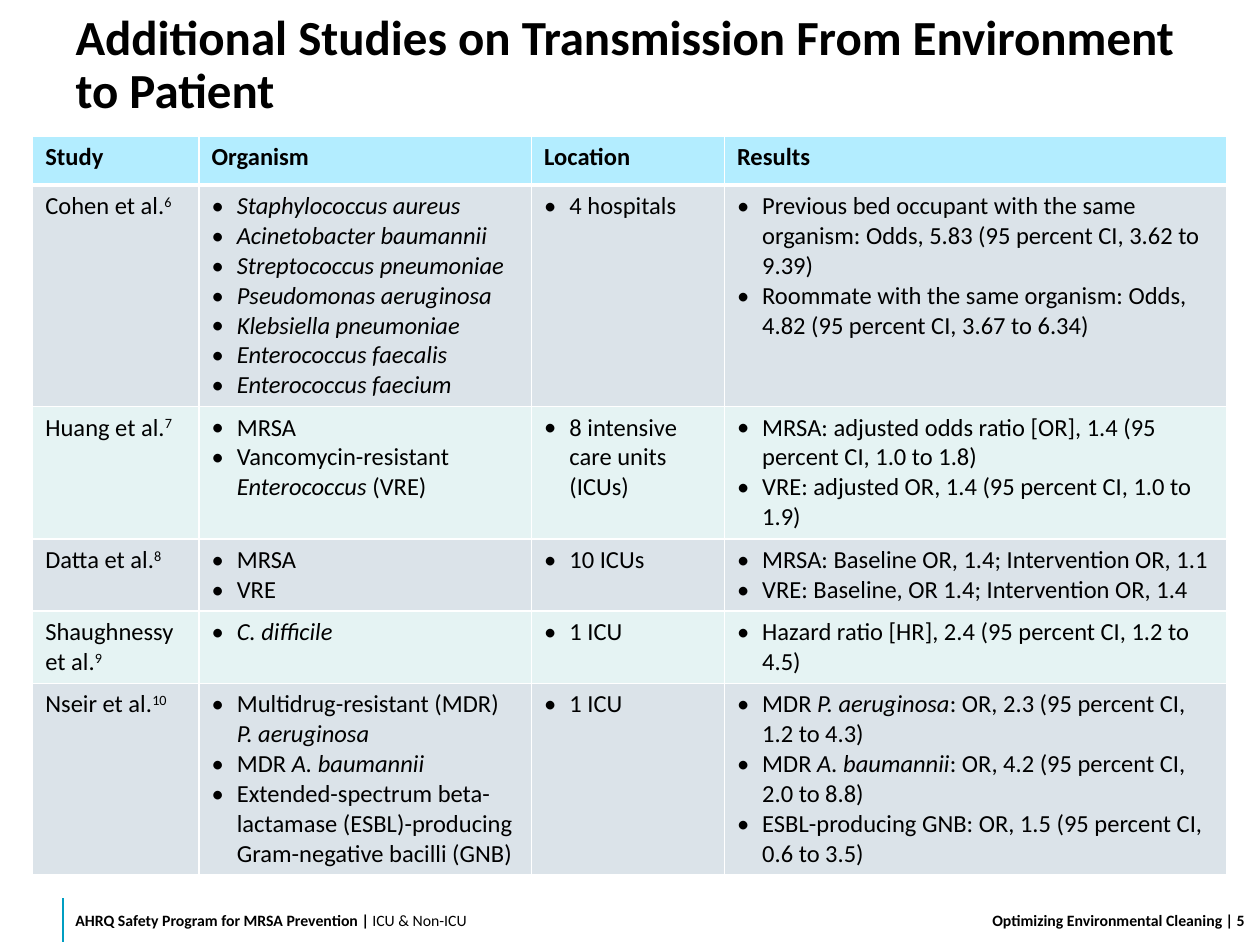
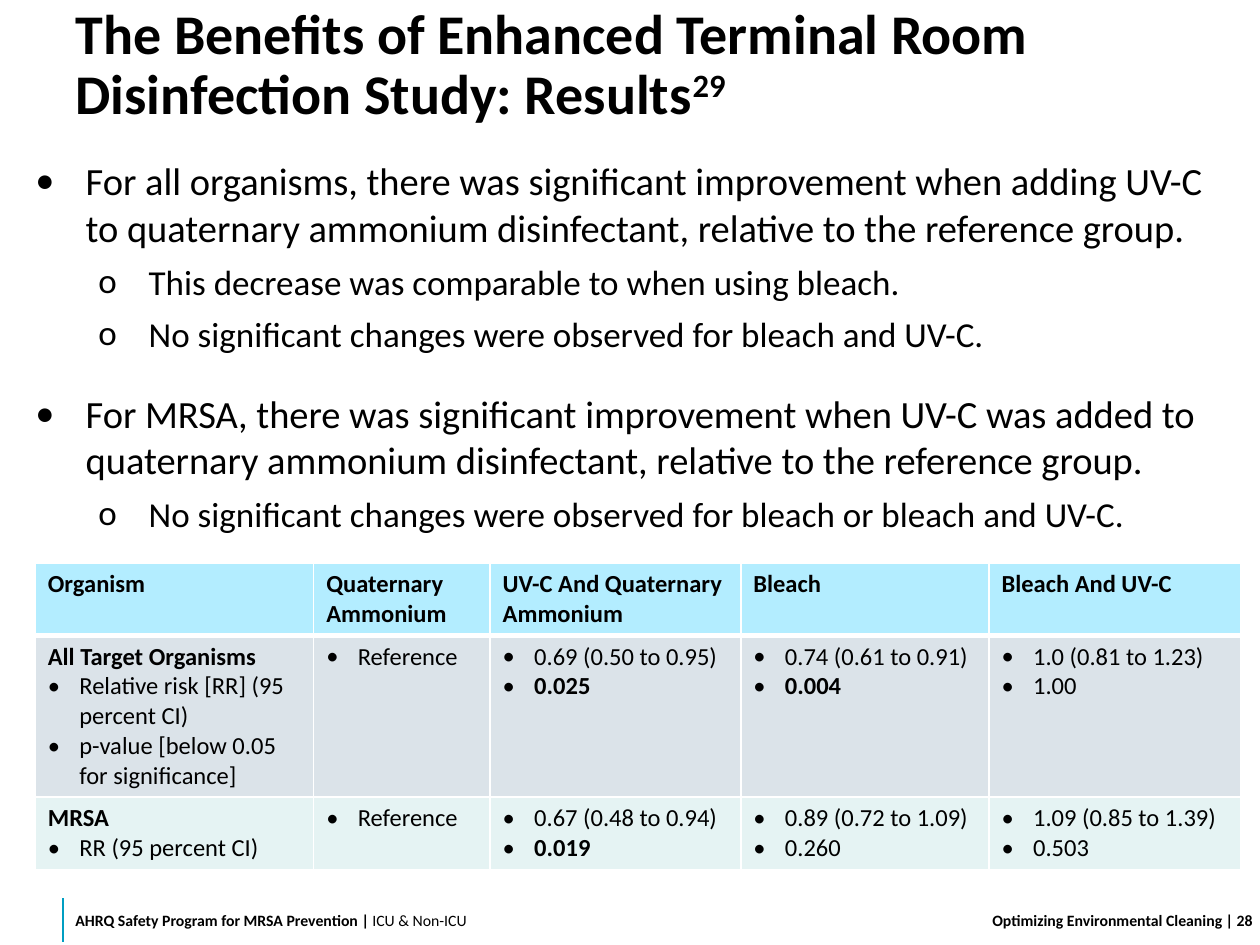
from lxml import etree
from pptx import Presentation
from pptx.dml.color import RGBColor
from pptx.enum.shapes import MSO_CONNECTOR
from pptx.enum.text import MSO_ANCHOR, MSO_AUTO_SIZE, PP_ALIGN
from pptx.oxml import parse_xml
from pptx.oxml.ns import nsdecls, qn
from pptx.util import Inches, Pt

BLACK = RGBColor(0x00, 0x00, 0x00)
TEAL = RGBColor(0x00, 0x9E, 0xC2)
SKY = RGBColor(0xB3, 0xED, 0xFF)
GRAY = RGBColor(0xDB, 0xE3, 0xE9)
MINT = RGBColor(0xE5, 0xF3, 0xF3)
FONT = "Calibri"
LEFT, RIGHT = PP_ALIGN.LEFT, PP_ALIGN.RIGHT
MIDDLE = MSO_ANCHOR.MIDDLE
NO_FIT = MSO_AUTO_SIZE.NONE
STRAIGHT = MSO_CONNECTOR.STRAIGHT

# Text marks: "- " bullet, "!" bold, *italic*, ^superscript
STUDIES = [
    ["!Study", "!Organism", "!Location", "!Results"],
    ["Cohen et al.^6",
     "- *Staphylococcus aureus*\n- *Acinetobacter baumannii*\n"
     "- *Streptococcus pneumoniae*\n- *Pseudomonas aeruginosa*\n"
     "- *Klebsiella pneumoniae*\n- *Enterococcus faecalis*\n"
     "- *Enterococcus faecium*",
     "- 4 hospitals",
     "- Previous bed occupant with the same organism: Odds, 5.83 "
     "(95 percent CI, 3.62 to 9.39)\n"
     "- Roommate with the same organism: Odds, 4.82 "
     "(95 percent CI, 3.67 to 6.34)"],
    ["Huang et al.^7",
     "- MRSA\n- Vancomycin-resistant *Enterococcus* (VRE)",
     "- 8 intensive care units (ICUs)",
     "- MRSA: adjusted odds ratio [OR], 1.4 (95 percent CI, 1.0 to 1.8)\n"
     "- VRE: adjusted OR, 1.4 (95 percent CI, 1.0 to 1.9)"],
    ["Datta et al.^8", "- MRSA\n- VRE", "- 10 ICUs",
     "- MRSA: Baseline OR, 1.4; Intervention OR, 1.1\n"
     "- VRE: Baseline, OR 1.4; Intervention OR, 1.4"],
    ["Shaughnessy et al.^9", "- *C. difficile*", "- 1 ICU",
     "- Hazard ratio [HR], 2.4 (95 percent CI, 1.2 to 4.5)"],
    ["Nseir et al.^10",
     "- Multidrug-resistant (MDR) *P. aeruginosa*\n- MDR *A. baumannii*\n"
     "- Extended-spectrum beta-lactamase (ESBL)-producing "
     "Gram-negative bacilli (GNB)",
     "- 1 ICU",
     "- MDR *P. aeruginosa*: OR, 2.3 (95 percent CI, 1.2 to 4.3)\n"
     "- MDR *A. baumannii*: OR, 4.2 (95 percent CI, 2.0 to 8.8)\n"
     "- ESBL-producing GNB: OR, 1.5 (95 percent CI, 0.6 to 3.5)"],
]
RISKS = [
    ["!Organism", "!Quaternary Ammonium", "!UV-C And Quaternary Ammonium",
     "!Bleach", "!Bleach And UV-C"],
    ["!All Target Organisms\n- Relative risk [RR] (95 percent CI)\n"
     "- p-value [below 0.05 for significance]",
     "- Reference", "- 0.69 (0.50 to 0.95)\n- !0.025",
     "- 0.74 (0.61 to 0.91)\n- !0.004", "- 1.0 (0.81 to 1.23)\n- 1.00"],
    ["!MRSA\n- RR (95 percent CI)",
     "- Reference", "- 0.67 (0.48 to 0.94)\n- !0.019",
     "- 0.89 (0.72 to 1.09)\n- 0.260", "- 1.09 (0.85 to 1.39)\n- 0.503"],
]
POINTS = [
    (0, 0, "For all organisms, there was significant improvement when adding "
     "UV-C to quaternary ammonium disinfectant, relative to the reference "
     "group."),
    (1, 6, "This decrease was comparable to when using bleach."),
    (1, 6, "No significant changes were observed for bleach and UV-C."),
    (0, 20, "For MRSA, there was significant improvement when UV-C was added "
     "to quaternary ammonium disinfectant, relative to the reference group."),
    (1, 6, "No significant changes were observed for bleach or bleach and "
     "UV-C."),
]


def style(para, size, bold=False):
    font = para.font
    font.name, font.size, font.bold = FONT, Pt(size), bold
    font.color.rgb = BLACK


def bullet(para, mark, left, hang):
    props = para._p.get_or_add_pPr()
    props.set("marL", str(Inches(left)))
    props.set("indent", str(-Inches(hang)))
    etree.SubElement(props, qn("a:buFont")).set("typeface", FONT)
    etree.SubElement(props, qn("a:buChar")).set("char", mark)


def add_run(para, text):
    run = para.add_run()
    run.text = text
    return run


def write(para, text, size):
    bold = text.startswith("!")
    style(para, size, bold)
    for i, part in enumerate(text.lstrip("!").split("*")):
        base, _, power = part.partition("^")
        if base:
            run = add_run(para, base)
            if i % 2:
                run.font.italic = True
        if power:
            add_run(para, power)._r.get_or_add_rPr().set("baseline", "30000")


def place(shape, box):
    shape.left, shape.top, shape.width, shape.height = map(Inches, box)


def frame(shape, insets):
    text = shape.text_frame
    text.word_wrap, text.auto_size = True, NO_FIT
    (text.margin_left, text.margin_top,
     text.margin_right, text.margin_bottom) = map(Inches, insets)
    return text


def add_title(slide, box, text, size):
    title = slide.shapes.title
    place(title, box)
    area = frame(title, (0.1, 0.1, 0.1, 0.05))
    area.vertical_anchor = MIDDLE
    para = area.paragraphs[0]
    para.alignment, para.line_spacing = LEFT, 0.9
    write(para, "!" + text, size)


def add_body(slide, box, points):
    body = slide.placeholders[1]
    place(body, box)
    area = frame(body, (0.1, 0.05, 0.1, 0.05))
    for i, (level, gap, text) in enumerate(points):
        para = area.add_paragraph() if i else area.paragraphs[0]
        para.level, para.space_before = level, Pt(gap)
        bullet(para, "•o"[level], 0.4 + 0.5 * level, 0.4)
        write(para, text, 22 - 2 * level)


def edge(cell, widths):
    props = cell._tc.get_or_add_tcPr()
    for i, (side, width) in enumerate(zip("LRTB", widths)):
        props.insert(i, parse_xml(
            f'<a:ln{side} {nsdecls("a")} w="{Pt(width)}"><a:solidFill>'
            f'<a:srgbClr val="FFFFFF"/></a:solidFill></a:ln{side}>'))


def fill_cell(cell, text, row, hang):
    cell.fill.solid()
    cell.fill.fore_color.rgb = (MINT, GRAY)[row % 2] if row else SKY
    edge(cell, (1, 1, 3 if row == 1 else 1, 1 if row else 3))
    area = cell.text_frame
    for i, line in enumerate(text.split("\n")):
        para = area.add_paragraph() if i else area.paragraphs[0]
        if line.startswith("- "):
            bullet(para, "•", hang, hang)
        write(para, line.removeprefix("- "), 14)


def add_grid(slide, left, top, cols, rows, data, hang):
    box = map(Inches, (left, top, sum(cols), sum(rows)))
    table = slide.shapes.add_table(len(rows), len(cols), *box).table
    for col, width in zip(table.columns, cols):
        col.width = Inches(width)
    for r, (height, line) in enumerate(zip(rows, data)):
        table.rows[r].height = Inches(height)
        for c, text in enumerate(line):
            fill_cell(table.cell(r, c), text, r, hang)


def add_note(slide, box, insets, text, align=LEFT):
    note = slide.shapes.add_textbox(*map(Inches, box))
    area = frame(note, insets)
    area.vertical_anchor = MIDDLE
    para = area.paragraphs[0]
    para.alignment = align
    write(para, text, 9)
    return para


def add_footer(slide, page, left=0.5, top=7.1):
    rule = slide.shapes.add_connector(
        STRAIGHT, *map(Inches, (left, top + 0.03, left, top + 0.38)))
    rule.line.color.rgb, rule.line.width = TEAL, Pt(1)
    etree.SubElement(rule._element.spPr, qn("a:effectLst"))
    para = add_note(slide, (left, top, 4.1, 0.4), (0.1, 0, 0.1, 0),
                    "!AHRQ Safety Program for MRSA Prevention | ")
    add_run(para, "ICU & Non-ICU").font.bold = False
    add_note(slide, (left + 6.6, top, 2.6, 0.4), (0.1, 0.05, 0, 0.05),
             "!Optimizing Environmental Cleaning", RIGHT)
    add_note(slide, (left + 9.2, top, 0.3, 0.4), (0, 0.05, 0, 0.05),
             f"! | {page}")


def add_studies(deck):
    slide = deck.slides.add_slide(deck.slide_layouts[5])
    add_title(slide, (0.5, 0, 9.2, 1), "Additional Studies on Transmission "
              "From Environment to Patient", 28)
    add_grid(slide, 0.26, 1.08, (1.32, 2.64, 1.53, 3.99),
             (0.39, 1.75, 1.05, 0.57, 0.57, 1.52), STUDIES, 0.2)
    add_footer(slide, 5)


def add_results(deck):
    slide = deck.slides.add_slide(deck.slide_layouts[1])
    add_title(slide, (0.5, 0, 9.33, 1), "The Benefits of Enhanced Terminal "
              "Room Disinfection Study: Results^29", 32)
    add_body(slide, (0.18, 1.2, 9.65, 3.03), POINTS)
    add_grid(slide, 0.28, 4.47, (2.21, 1.4, 1.99, 1.97, 2),
             (0.57, 1.28, 0.57), RISKS, 0.25)
    add_footer(slide, 28)


def main():
    deck = Presentation()
    deck.slide_width, deck.slide_height = Inches(10), Inches(7.5)
    add_studies(deck)
    add_results(deck)
    deck.save("out.pptx")


if __name__ == "__main__":
    main()
